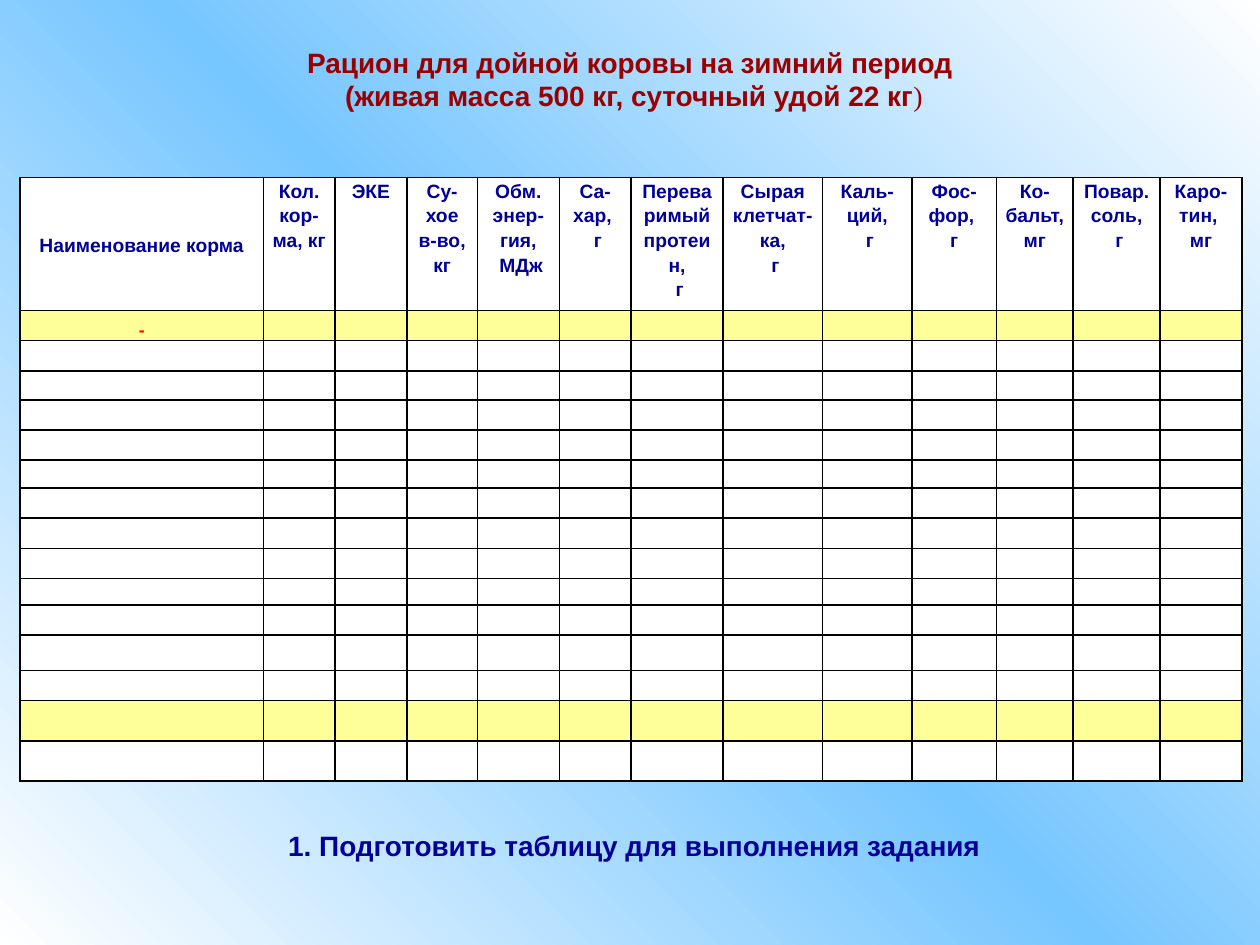
from copy import deepcopy

from lxml.etree import SubElement
from pptx import Presentation
from pptx.dml.color import RGBColor
from pptx.enum.text import MSO_ANCHOR, MSO_AUTO_SIZE, PP_ALIGN
from pptx.oxml.ns import qn
from pptx.util import Inches, Pt

RED, NAVY, WHITE, YELLOW = "990000", "000099", "FFFFFF", "FFFF99"

TITLE = [
    [("Рацион для дойной коровы на зимний период", "Arial", True)],
    [(" (живая масса 500 кг, суточный удой 22 кг", "Arial", True),
     (")", "Times New Roman", False)],
]
TASK = "1. Подготовить таблицу для выполнения задания"

# Column width and heading paragraphs
COLUMNS = [
    (1.93, ["Наименование корма"]),
    (0.57, ["Кол. кор-ма, кг"]),
    (0.57, ["ЭКЕ"]),
    (0.56, ["Су-хое в-во, кг"]),
    (0.65, ["Обм. энер-гия,", " МДж"]),
    (0.57, ["Са-хар, ", " г"]),
    (0.73, ["Переваримый протеин,", " г"]),
    (0.79, ["Сырая клетчат-ка,", " г"]),
    (0.71, ["Каль-ций,", " г"]),
    (0.67, ["Фос-фор, ", "г"]),
    (0.61, ["Ко-бальт, мг"]),
    (0.69, ["Повар. соль,", " г"]),
    (0.65, ["Каро-тин, ", "мг"]),
]
ROW_HEIGHTS = [1.05, 0.24, 0.24, 0.23, 0.24, 0.24, 0.22, 0.24,
               0.24, 0.24, 0.21, 0.24, 0.28, 0.24, 0.32, 0.32]
YELLOW_ROWS = (1, 14)


def color(value):
    return RGBColor.from_string(value)


def add_span(para, text, size, fill, font="Arial", bold=True):
    span = para.add_run()
    span.text = text
    span.font.size = Pt(size)
    span.font.name = font
    span.font.bold = bold
    span.font.color.rgb = color(fill)


def add_para(frame, index):
    """Return a centred paragraph, reusing the first one of the frame."""
    para = frame.add_paragraph() if index else frame.paragraphs[0]
    para.alignment = PP_ALIGN.CENTER
    return para


def write_cell(cell, lines, size, fill):
    for index, line in enumerate(lines):
        para = add_para(cell.text_frame, index)
        para.line_spacing = 1.15
        add_span(para, line, size, fill)


def style_cell(cell, fill):
    cell.margin_left = cell.margin_right = Inches(0.07)
    cell.margin_top = cell.margin_bottom = 0
    properties = cell._tc.get_or_add_tcPr()
    for side in ("lnL", "lnR", "lnT", "lnB"):
        line = SubElement(properties, qn(f"a:{side}"), w=str(Pt(1)))
        solid = SubElement(line, qn("a:solidFill"))
        SubElement(solid, qn("a:srgbClr"), val="000000")
    cell.fill.solid()
    cell.fill.fore_color.rgb = color(fill)


def paint_background(page):
    fill = page.background.fill
    fill.gradient()
    fill.gradient_angle = 45
    stop_list = page.element.find(".//" + qn("a:gsLst"))
    stop_list.insert(1, deepcopy(stop_list[0]))
    stops = [(0, WHITE), (0.5, "76C6FF"), (1, WHITE)]
    for stop, (position, value) in zip(fill.gradient_stops, stops):
        stop.position = position
        stop.color.rgb = color(value)


def add_title(page):
    title = page.shapes.title
    title.left, title.top = Inches(0.75), Inches(0)
    title.width, title.height = Inches(8.5), Inches(1.25)
    frame = title.text_frame
    frame.vertical_anchor = MSO_ANCHOR.MIDDLE
    frame.auto_size = MSO_AUTO_SIZE.SHAPE_TO_FIT_TEXT
    for index, spans in enumerate(TITLE):
        para = add_para(frame, index)
        for text, font, bold in spans:
            add_span(para, text, 16, RED, font, bold)


def add_ration_table(page):
    frame = page.shapes.add_table(
        len(ROW_HEIGHTS), len(COLUMNS), Inches(0.16), Inches(1.41),
        Inches(sum(width for width, _ in COLUMNS)), Inches(sum(ROW_HEIGHTS)))
    table = frame.table
    table.first_row = table.horz_banding = False
    for row, height in zip(table.rows, ROW_HEIGHTS):
        row.height = Inches(height)
    for index, (width, heading) in enumerate(COLUMNS):
        table.columns[index].width = Inches(width)
        write_cell(table.cell(0, index), heading, 11, NAVY)
    write_cell(table.cell(1, 0), ["-"], 10, "FF0000")
    table.cell(0, 0).vertical_anchor = MSO_ANCHOR.MIDDLE
    table.cell(1, 0).vertical_anchor = MSO_ANCHOR.BOTTOM

    for row_index, row in enumerate(table.rows):
        for cell in row.cells:
            style_cell(cell, YELLOW if row_index in YELLOW_ROWS else WHITE)
            if not cell.text_frame.text:
                # A small end mark keeps empty rows at their set height
                para = cell.text_frame.paragraphs[0]
                SubElement(para._p, qn("a:endParaRPr"), sz="1000")


def add_task(page):
    box = page.shapes.add_textbox(
        Inches(0.35), Inches(6.53), Inches(9.37), Inches(0.37))
    frame = box.text_frame
    frame.word_wrap = True
    frame.auto_size = MSO_AUTO_SIZE.SHAPE_TO_FIT_TEXT
    add_span(add_para(frame, 0), TASK, 16, NAVY)


def main():
    deck = Presentation()
    deck.slide_width, deck.slide_height = Inches(10), Inches(7.5)
    page = deck.slides.add_slide(deck.slide_layouts[5])
    paint_background(page)
    add_title(page)
    add_ration_table(page)
    add_task(page)
    deck.save("out.pptx")


if __name__ == "__main__":
    main()
